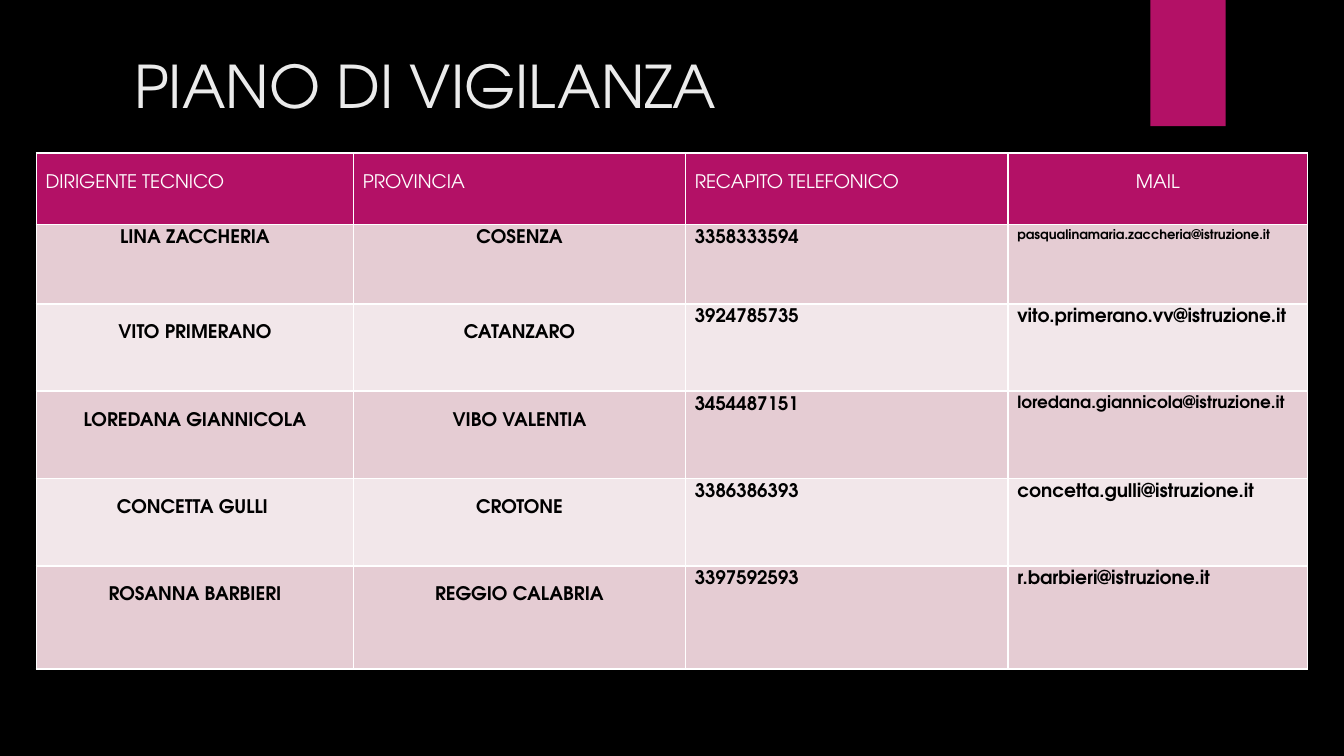
from dataclasses import dataclass

from lxml.etree import SubElement
from pptx import Presentation
from pptx.dml.color import RGBColor
from pptx.enum.shapes import MSO_SHAPE
from pptx.enum.text import PP_ALIGN
from pptx.oxml.ns import qn
from pptx.slide import Slide
from pptx.table import _Cell
from pptx.text.text import TextFrame
from pptx.util import Inches, Pt

FONT = "TeX Gyre Adventor"
ACCENT = "B31166"
WHITE = "FFFFFF"
BLACK = "000000"
BANDS = ("E5CCD3", "F2E7EA")
COLUMN_WIDTHS = (2.36, 2.47, 2.4, 2.23)
ROW_HEIGHTS = (0.53, 0.59, 0.65, 0.65, 0.65, 0.77)
HEADINGS = ("DIRIGENTE TECNICO", "PROVINCIA", "RECAPITO TELEFONICO", "MAIL")
MARGIN = 0.04
LOWERED_MARGIN = 0.16


@dataclass(frozen=True)
class Contact:
    name: str
    province: str
    phone: str
    mail: str
    mail_size: float = 10
    name_margin: float = LOWERED_MARGIN


CONTACTS = (
    Contact("LINA ZACCHERIA", "COSENZA", "3358333594",
            "pasqualinamaria.zaccheria@istruzione.it", mail_size=7, name_margin=MARGIN),
    Contact("VITO PRIMERANO", "CATANZARO", "3924785735", "vito.primerano.vv@istruzione.it"),
    Contact("LOREDANA GIANNICOLA", "VIBO VALENTIA", "3454487151",
            "loredana.giannicola@istruzione.it", mail_size=9),
    Contact("CONCETTA GULLI ", "CROTONE", "3386386393", "concetta.gulli@istruzione.it"),
    Contact("ROSANNA BARBIERI", "REGGIO CALABRIA", "3397592593", "r.barbieri@istruzione.it"),
)


def color(value: str) -> RGBColor:
    return RGBColor.from_string(value)


def write(frame: TextFrame, text: str, *, size: float = 10, fill: str = BLACK,
          bold: bool = False, centered: bool = False) -> None:
    paragraph = frame.paragraphs[0]
    paragraph.alignment = PP_ALIGN.CENTER if centered else PP_ALIGN.LEFT
    run = paragraph.add_run()
    run.text = text
    run.font.name = FONT
    run.font.size = Pt(size)
    run.font.bold = bold
    run.font.color.rgb = color(fill)


def style_cell(cell: _Cell, fill: str, top: float) -> None:
    cell.margin_left = cell.margin_right = Inches(0.07)
    cell.margin_top, cell.margin_bottom = Inches(top), Inches(MARGIN)
    properties = cell._tc.get_or_add_tcPr()
    for side in ("a:lnL", "a:lnR", "a:lnT", "a:lnB"):
        line = SubElement(properties, qn(side), w=str(Pt(1)))
        SubElement(SubElement(line, qn("a:solidFill")), qn("a:srgbClr"), val=WHITE)
    cell.fill.solid()
    cell.fill.fore_color.rgb = color(fill)


def add_contact_table(slide: Slide) -> None:
    table = slide.shapes.add_table(
        len(ROW_HEIGHTS), len(COLUMN_WIDTHS), Inches(0.27), Inches(1.14),
        Inches(sum(COLUMN_WIDTHS)), Inches(sum(ROW_HEIGHTS))).table
    for column, width in zip(table.columns, COLUMN_WIDTHS):
        column.width = Inches(width)
    for row, height in zip(table.rows, ROW_HEIGHTS):
        row.height = Inches(height)

    for index, heading in enumerate(HEADINGS):
        cell = table.cell(0, index)
        style_cell(cell, ACCENT, LOWERED_MARGIN)
        write(cell.text_frame, heading, fill=WHITE, centered=heading == "MAIL")

    for row_index, contact in enumerate(CONTACTS, start=1):
        values = (contact.name, contact.province, contact.phone, contact.mail)
        for column_index, value in enumerate(values):
            cell = table.cell(row_index, column_index)
            centered = column_index < 2
            style_cell(cell, BANDS[(row_index - 1) % 2],
                       contact.name_margin if centered else MARGIN)
            write(cell.text_frame, value, bold=True, centered=centered,
                  size=contact.mail_size if column_index == 3 else 10)


def main() -> None:
    presentation = Presentation()
    presentation.slide_width = Inches(10)
    presentation.slide_height = Inches(10) * 9 // 16
    slide = presentation.slides.add_slide(presentation.slide_layouts[6])
    slide.background.fill.solid()
    slide.background.fill.fore_color.rgb = color(BLACK)

    ribbon = slide.shapes.add_shape(
        MSO_SHAPE.RECTANGLE, Inches(8.56), Inches(0), Inches(0.56), Inches(0.94))
    ribbon.shadow.inherit = False
    ribbon.fill.solid()
    ribbon.fill.fore_color.rgb = color(ACCENT)
    ribbon.line.fill.background()

    title = slide.shapes.add_textbox(Inches(0.9), Inches(0.32), Inches(7.71), Inches(1.15))
    title.text_frame.word_wrap = True
    write(title.text_frame, "PIANO DI VIGILANZA", size=31.5, fill="EBEBEB")
    add_contact_table(slide)
    presentation.save("out.pptx")


if __name__ == "__main__":
    main()
